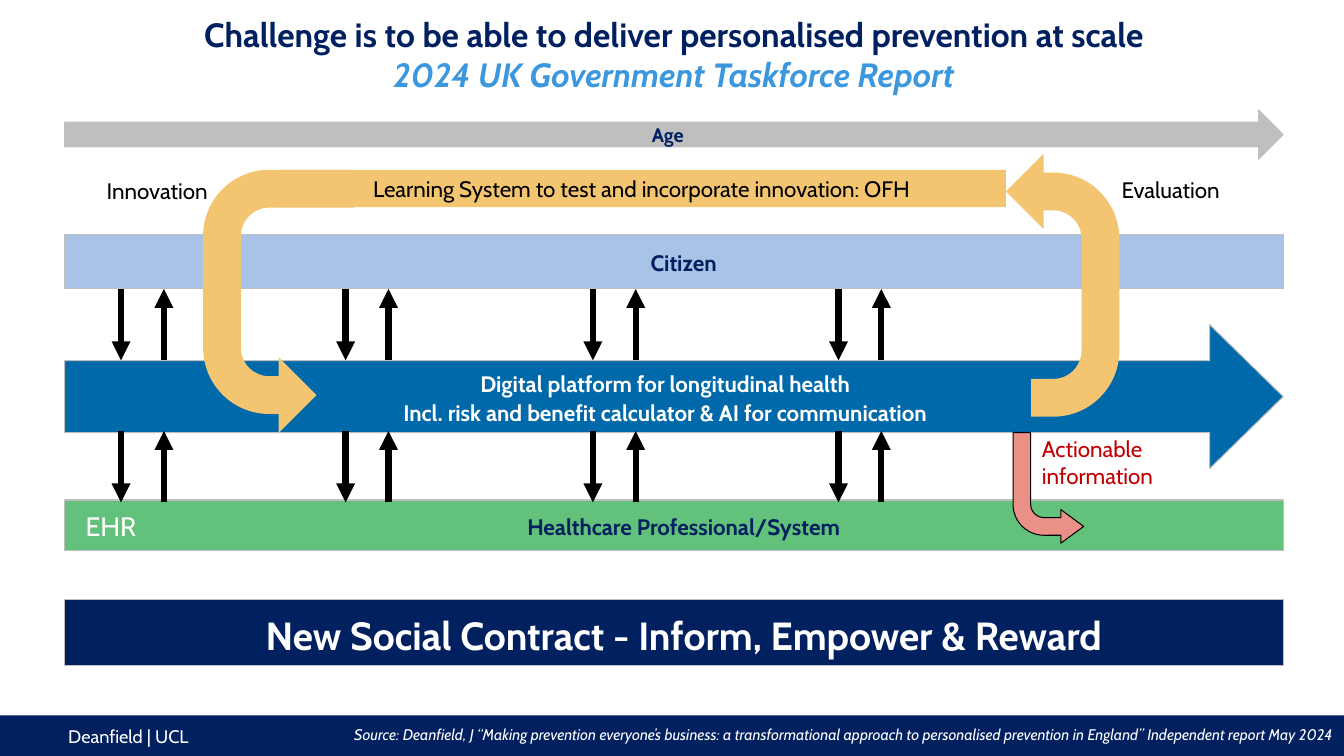
from lxml.etree import SubElement
from pptx import Presentation
from pptx.dml.color import RGBColor
from pptx.enum.shapes import MSO_CONNECTOR, MSO_SHAPE
from pptx.enum.text import MSO_ANCHOR, PP_ALIGN
from pptx.oxml.ns import qn
from pptx.util import Cm, Pt

FONT = "Cabin"
NAVY, WHITE, BLACK = "002060", "FFFFFF", "000000"
BLUE, GREY, AMBER = "0069AA", "BFBFBF", "F3C571"
BAND_LEFT, BAND_WIDTH = 1.63, 30.71


def rgb(value):
    return RGBColor.from_string(value)


def style_run(run, size, color, bold=False, italic=False):
    run.font.name, run.font.size = FONT, Pt(size)
    run.font.bold, run.font.italic = bold, italic
    run.font.color.rgb = rgb(color)


def write(frame, text, size, color, align=PP_ALIGN.LEFT, spacing=None, **style):
    frame.text = text
    for paragraph in frame.paragraphs:
        paragraph.alignment = align
        if spacing:
            paragraph.line_spacing = spacing
        for run in paragraph.runs:
            style_run(run, size, color, **style)


def add_block(slide, preset, box, fill, outline=None):
    block = slide.shapes.add_shape(preset, *map(Cm, box))
    block.shadow.inherit = False
    block.fill.solid()
    block.fill.fore_color.rgb = rgb(fill)
    if outline:
        block.line.color.rgb = rgb(outline)
        block.line.width = Pt(0.75)
    else:
        block.line.fill.background()
    block.text_frame.vertical_anchor = MSO_ANCHOR.MIDDLE
    return block


def add_label(slide, box, text, size, color, wrap=False, **style):
    frame = slide.shapes.add_textbox(*map(Cm, box)).text_frame
    frame.word_wrap = wrap
    write(frame, text, size, color, **style)


def add_band(slide, top, height, text, fill, color=NAVY, size=16,
             preset=MSO_SHAPE.RECTANGLE):
    box = (BAND_LEFT, top, BAND_WIDTH, height)
    band = add_block(slide, preset, box, fill, GREY)
    frame = band.text_frame
    frame.margin_left, frame.margin_right = Cm(0.69), Cm(0.2)
    frame.margin_top = frame.margin_bottom = Cm(0.1)
    write(frame, text, size, color, PP_ALIGN.CENTER, 1.1, bold=True)
    return band


def flip(shape, axis):
    shape._element.spPr.get_or_add_xfrm().set(f"flip{axis}", "1")


def add_arrow(slide, x, start, end):
    arrow = slide.shapes.add_connector(
        MSO_CONNECTOR.STRAIGHT, Cm(x), Cm(start), Cm(x), Cm(end))
    arrow.line.color.rgb = rgb(BLACK)
    arrow.line.width = Pt(4.5)
    SubElement(arrow.line._get_or_add_ln(), qn("a:tailEnd"), type="triangle")
    SubElement(arrow._element.spPr, qn("a:effectLst"))


def add_exchange(slide, top, height):
    """Pairs of down and up arrows across one gap between bands."""
    for x in (3.05, 8.71, 14.94, 21.13):
        add_arrow(slide, x, top, top + height)
        add_arrow(slide, x + 1.08, top + height, top)


def add_turn(slide, left, top, width, height, axis):
    """U-turn lying on its side; the box is the one seen after rotation."""
    shift = (height - width) / 2
    box = (left - shift, top + shift, height, width)
    turn = add_block(slide, MSO_SHAPE.U_TURN_ARROW, box, AMBER)
    turn.rotation = 90
    flip(turn, axis)


def add_learning_loop(slide, left, top, width):
    turn_width, turn_height = 3.81, 6.63
    add_label(slide, (left - 2.68, top + 0.06, 3.1, 0.94),
              "Innovation", 16, BLACK)
    add_label(slide, (left + width - 0.32, top + 0.04, 3.1, 0.94),
              "Evaluation", 16, BLACK, align=PP_ALIGN.RIGHT)
    add_turn(slide, left + width - turn_width, top - 0.41,
             turn_width, turn_height, "H")
    add_turn(slide, left, top, turn_width, turn_height, "V")
    learning = add_block(slide, MSO_SHAPE.RECTANGLE,
                         (left + 1.87, top, 18.36, 0.94), AMBER)
    write(learning.text_frame,
          "Learning System to test and incorporate innovation: OFH",
          16, BLACK, PP_ALIGN.CENTER)
    # Platform colour over the tail of the evaluation turn
    add_block(slide, MSO_SHAPE.RECTANGLE,
              (left + width - 4.26, top + 5.17, 2.03, 1.07), BLUE)


def add_actionable(slide, left, top):
    bend = add_block(slide, MSO_SHAPE.BENT_ARROW,
                     (left, top, 1.78, 2.79), "EA9086", BLACK)
    for index, value in enumerate((0.25, 0.238, 0.323, 0.438)):
        bend.adjustments[index] = value
    flip(bend, "V")
    add_label(slide, (left + 0.48, top - 0.05, 3.38, 1.63),
              "Actionable\ninformation", 16, "C00000")


def add_footer(slide, top, width, height):
    add_block(slide, MSO_SHAPE.RECTANGLE, (0, top, width, height), NAVY)
    add_label(slide, (1.47, top + 0.13, 4.09, 0.81), "Deanfield | UCL",
              13, WHITE, wrap=True)
    add_label(slide, (3.76, top + 0.13, width - 3.76, 0.74),
              "Source: Deanfield, J “Making prevention everyone’s business: "
              "a transformational approach to personalised prevention in "
              "England” Independent report May 2024",
              11, WHITE, wrap=True, align=PP_ALIGN.RIGHT, italic=True)


def set_title(slide, left, top, width, height):
    title = slide.shapes.title
    title.left, title.top = Cm(left), Cm(top)
    title.width, title.height = Cm(width), Cm(height)
    frame = title.text_frame
    frame.vertical_anchor = MSO_ANCHOR.MIDDLE
    write(frame, "Challenge is to be able to deliver personalised prevention "
          "at scale\v2024 UK Government Taskforce Report",
          24, NAVY, PP_ALIGN.CENTER, bold=True)
    style_run(frame.paragraphs[0].runs[1], 24, "3B97DE", bold=True, italic=True)


def main():
    deck = Presentation()
    deck.slide_width, deck.slide_height = Cm(33.87), Cm(19.05)
    slide = deck.slides.add_slide(deck.slide_layouts[5])

    set_title(slide, 0.05, 0.23, 33.86, 2.26)
    add_footer(slide, 18.03, 33.87, 1.02)

    # Layers of the system
    add_band(slide, 12.6, 1.27, "Healthcare Professional/System", "62C17A")
    platform = add_band(
        slide, 8.18, 3.63,
        "Digital platform for longitudinal health\n"
        "Incl. risk and benefit calculator & AI for communication",
        BLUE, WHITE, preset=MSO_SHAPE.RIGHT_ARROW)
    platform.adjustments[1] = 0.511
    add_band(slide, 5.92, 1.35, "Citizen", "A8C3E6")
    add_label(slide, (1.91, 12.73, 1.78, 1.07), "EHR", 19, WHITE)

    # Exchanges between the layers
    add_exchange(slide, 7.28, 1.8)
    add_exchange(slide, 10.86, 1.8)
    add_actionable(slide, 25.53, 10.9)

    # Life course
    age = add_block(slide, MSO_SHAPE.RIGHT_ARROW,
                    (BAND_LEFT, 2.77, BAND_WIDTH, 1.24), GREY, GREY)
    write(age.text_frame, "Age", 14, NAVY, PP_ALIGN.CENTER, bold=True)

    add_band(slide, 15.11, 1.65,
             "New Social Contract - Inform, Empower & Reward",
             NAVY, WHITE, size=28)
    add_learning_loop(slide, 5.12, 4.28, 23.09)
    deck.save("out.pptx")


if __name__ == "__main__":
    main()
